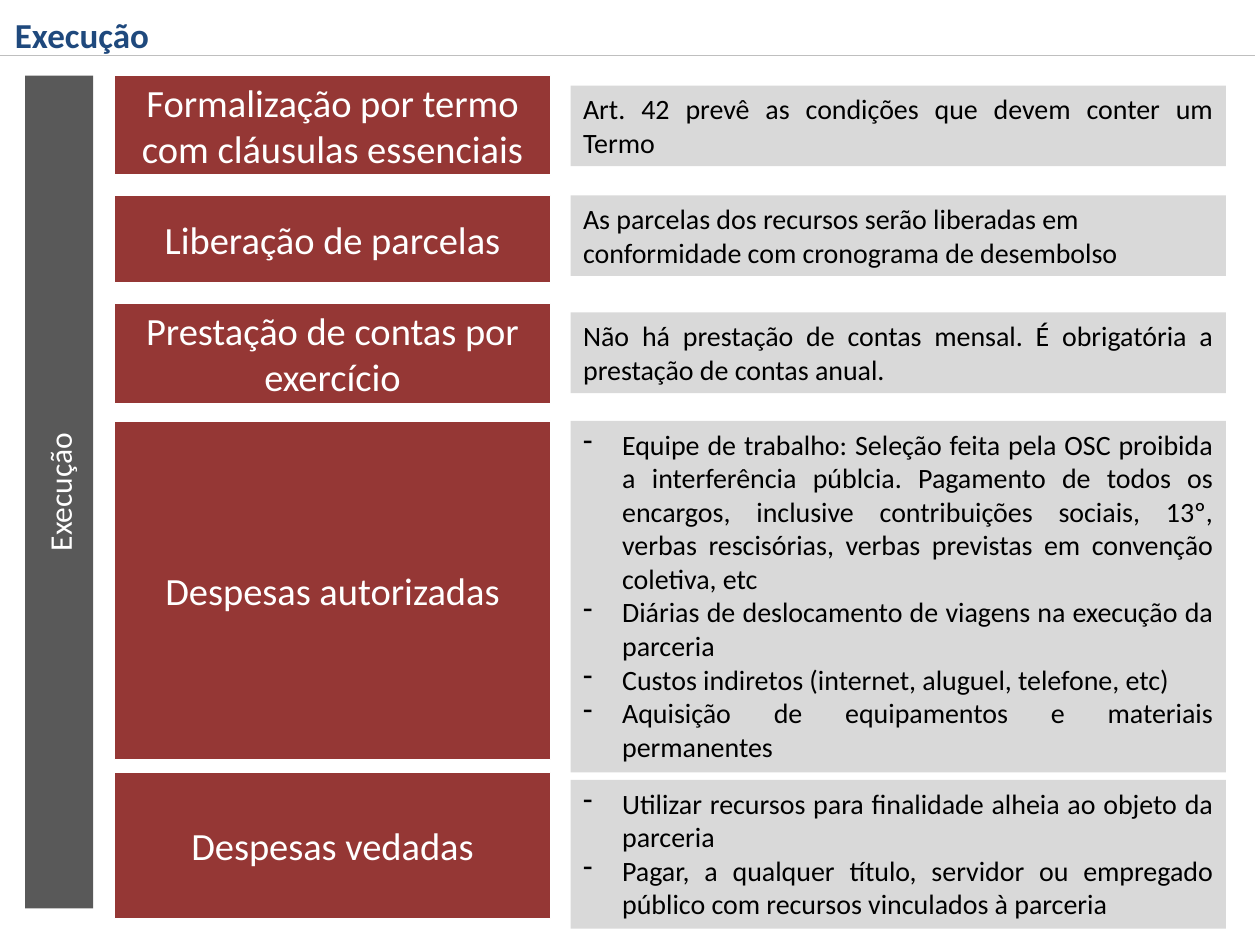
from pptx import Presentation
from pptx.dml.color import RGBColor
from pptx.enum.shapes import MSO_CONNECTOR, MSO_SHAPE
from pptx.enum.text import MSO_ANCHOR, PP_ALIGN
from pptx.oxml.ns import qn
from pptx.util import Inches, Pt
from lxml import etree

RECT, STRAIGHT = MSO_SHAPE.RECTANGLE, MSO_CONNECTOR.STRAIGHT
TOP, MIDDLE = MSO_ANCHOR.TOP, MSO_ANCHOR.MIDDLE
LEFT, CENTER, JUSTIFY = PP_ALIGN.LEFT, PP_ALIGN.CENTER, PP_ALIGN.JUSTIFY

THEME = {
    "font": "Calibri",
    "title": "1F497D", "rule": "BFBFBF", "stage": "595959",
    "topic": "953735", "detail": "D9D9D9", "light": "FFFFFF", "dark": "000000",
    "title_size": 20, "stage_size": 18, "topic_size": 22, "detail_size": 16,
}

# Columns as (left, width), in inches
STAGE_COL, TOPIC_COL, DETAIL_COL = (0.2, 0.54), (0.91, 3.46), (4.53, 5.2)
HANGING = Inches(0.31)

# Rows: topic, (top, height), detail (top, height), alignment, bulleted, paragraphs
ROWS = [
    ("Formalização por termo com cláusulas essenciais", (0.6, 0.79), (0.68, 0.64),
     JUSTIFY, False, ["Art. 42 prevê as condições que devem conter um Termo"]),
    ("Liberação de parcelas", (1.55, 0.69), (1.55, 0.64), LEFT, False,
     ["As parcelas dos recursos serão liberadas em conformidade com cronograma "
      "de desembolso"]),
    ("Prestação de contas por exercício", (2.41, 0.79), (2.48, 0.64), JUSTIFY, False,
     ["Não há prestação de contas mensal. É obrigatória a prestação de contas anual."]),
    ("Despesas autorizadas", (3.34, 2.69), (3.34, 2.79), JUSTIFY, True,
     ["Equipe de trabalho: Seleção feita pela OSC proibida a interferência públcia. "
      "Pagamento de todos os encargos, inclusive contribuições sociais, 13º, verbas "
      "rescisórias, verbas previstas em convenção coletiva, etc",
      "Diárias de deslocamento de viagens na execução da parceria",
      "Custos indiretos (internet, aluguel, telefone, etc)",
      "Aquisição de equipamentos e materiais permanentes"]),
    ("Despesas vedadas", (6.13, 1.16), (6.19, 1.18), JUSTIFY, True,
     ["Utilizar recursos para finalidade alheia ao objeto da parceria",
      "Pagar, a qualquer título, servidor ou empregado público com recursos "
      "vinculados à parceria"]),
]


def write(frame, paragraphs, size, color, align, anchor, bold=False):
    frame.word_wrap = True
    frame.vertical_anchor = anchor
    frame.text = "\n".join(paragraphs)
    for paragraph in frame.paragraphs:
        paragraph.alignment = align
        font = paragraph.runs[0].font
        font.name, font.size, font.bold = THEME["font"], Pt(THEME[size]), bold
        font.color.rgb = RGBColor.from_string(THEME[color])


def add_box(column, row, fill, outlined=False):
    (left, width), (top, height) = column, row
    box = slide.shapes.add_shape(RECT, Inches(left), Inches(top),
                                 Inches(width), Inches(height))
    box.shadow.inherit = False
    box.fill.solid()
    box.fill.fore_color.rgb = RGBColor.from_string(THEME[fill])
    if outlined:
        box.line.color.rgb = RGBColor.from_string(THEME["light"])
        box.line.width = Pt(0.75)
    else:
        box.line.fill.background()
    return box.text_frame


prs = Presentation()
prs.slide_width, prs.slide_height = Inches(10), Inches(7.5)
slide = prs.slides.add_slide(prs.slide_layouts[6])

# Heading and the rule below it
rule = slide.shapes.add_connector(STRAIGHT, Inches(-0.04), Inches(0.44),
                                  Inches(9.96), Inches(0.44))
rule.line.color.rgb = RGBColor.from_string(THEME["rule"])
rule.line.width = Pt(0.75)
etree.SubElement(rule._element.spPr, qn("a:effectLst"))

heading = slide.shapes.add_textbox(Inches(0.02), Inches(0.06), Inches(1.28), Inches(0.44))
write(heading.text_frame, ["Execução"], "title_size", "title", LEFT, TOP, bold=True)
heading.text_frame.word_wrap = False

# Topics with their details
for topic, topic_row, detail_row, align, bulleted, details in ROWS:
    topic_frame = add_box(TOPIC_COL, topic_row, "topic", outlined=True)
    write(topic_frame, [topic], "topic_size", "light", CENTER, MIDDLE)
    detail_frame = add_box(DETAIL_COL, detail_row, "detail")
    write(detail_frame, details, "detail_size", "dark", align, TOP)
    if bulleted:
        for paragraph in detail_frame.paragraphs:
            properties = paragraph._p.get_or_add_pPr()
            properties.set("marL", str(HANGING))
            properties.set("indent", str(-HANGING))
            etree.SubElement(properties, qn("a:buChar")).set("char", "-")

# Vertical stage bar
stage_frame = add_box(STAGE_COL, (0.6, 6.61), "stage")
write(stage_frame, ["Execução"], "stage_size", "light", CENTER, MIDDLE)
stage_frame._txBody.bodyPr.set("vert", "vert270")

prs.save("out.pptx")
